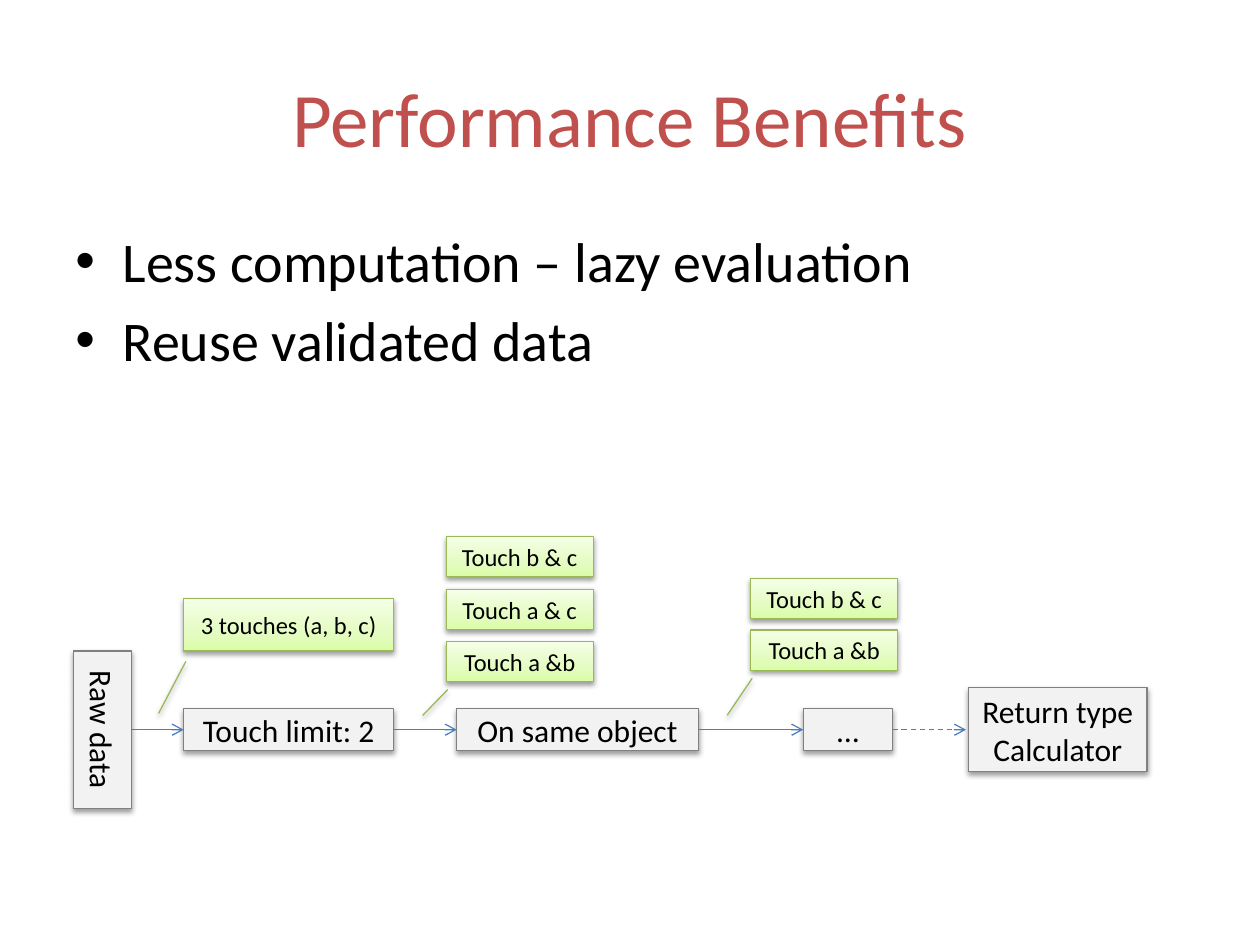
from dataclasses import dataclass

import lxml.etree
import pptx
import pptx.dml.color
import pptx.enum.dml
import pptx.enum.shapes
import pptx.enum.text
import pptx.oxml.ns
import pptx.util

Pt = pptx.util.Pt
qn = pptx.oxml.ns.qn
ALIGN = pptx.enum.text.PP_ALIGN
ANCHOR = pptx.enum.text.MSO_ANCHOR
PRESET = pptx.enum.shapes.MSO_SHAPE


@dataclass(frozen=True)
class Theme:
    font: str = "Calibri"
    title: str = "C0504D"
    text: str = "000000"
    step_fill: str = "F2F2F2"
    step_line: str = "808080"
    note_line: str = "98B955"
    note_stops: tuple = ((0, "DAFDA7"), (35, "E4FCC2"), (100, "F5FFE7"))
    arrow: str = "4B7EBC"
    title_size: float = 44
    body_size: float = 32
    step_size: float = 18
    note_size: float = 14
    line_width: float = 0.75


@dataclass(frozen=True)
class Step:
    text: str
    left: float
    width: float
    height: float = 24
    rotation: float = 0


@dataclass(frozen=True)
class Note:
    text: str
    left: float
    top: float
    width: float = 84
    height: float = 23
    pointer: tuple = ()  # callout adjustments: start y, x and end y, x


@dataclass(frozen=True)
class Arrow:
    start: float
    end: float
    dashed: bool = False


THEME = Theme()
AXIS = 417  # vertical centre of the pipeline
BULLETS = ("Less computation – lazy evaluation", "Reuse validated data")
STEPS = (
    Step("Raw data", 13.5, 90, 33, 90),
    Step("Touch limit: 2", 105, 120),
    Step("On same object", 261, 138),
    Step("…", 459, 51),
    Step("Return type Calculator", 553.5, 102, 48),
)
ARROWS = (Arrow(75, 105), Arrow(225, 261), Arrow(399, 459), Arrow(510, 552, True))
NOTES = (
    Note("3 touches (a, b, c)", 105, 342, 120, 30, (1.2, 0.01, 2.19, -0.12)),
    Note("Touch a &b", 255, 366.5, pointer=(1.2, 0.01, 1.84, -0.16)),
    Note("Touch a & c", 255, 336.75),
    Note("Touch b & c", 255, 306.5),
    Note("Touch a &b", 429, 360, pointer=(1.2, 0.01, 2.12, -0.16)),
    Note("Touch b & c", 429, 330.5),
)


def rgb(value: str) -> pptx.dml.color.RGBColor:
    return pptx.dml.color.RGBColor.from_string(value)


def add_run(paragraph, text: str, size: float, color: str) -> None:
    run = paragraph.add_run()
    run.text = text
    run.font.name = THEME.font
    run.font.size = Pt(size)
    run.font.color.rgb = rgb(color)


def add_color(parent, value: str):
    color = lxml.etree.SubElement(parent, qn("a:srgbClr"))
    color.set("val", value)
    return color


def add_shadow(shape) -> None:
    shape.shadow.inherit = False
    effects = shape._element.spPr.find(qn("a:effectLst"))
    shadow = lxml.etree.SubElement(effects, qn("a:outerShdw"))
    for name, value in (("blurRad", Pt(3.1)), ("dist", Pt(1.6)),
                        ("dir", 90 * 60000), ("rotWithShape", 0)):
        shadow.set(name, str(int(value)))
    alpha = lxml.etree.SubElement(add_color(shadow, "000000"), qn("a:alpha"))
    alpha.set("val", "38000")


def fill_gradient(shape) -> None:
    shape.fill.gradient()
    shape.fill.gradient_angle = 90
    stops = shape._element.spPr.find(qn("a:gradFill")).find(qn("a:gsLst"))
    for old_stop in list(stops):
        stops.remove(old_stop)
    for position, color in THEME.note_stops:
        stop = lxml.etree.SubElement(stops, qn("a:gs"))
        stop.set("pos", str(position * 1000))
        add_color(stop, color)


def add_box(slide, preset, box, top: float, line: str, size: float):
    shape = slide.shapes.add_shape(
        preset, Pt(box.left), Pt(top), Pt(box.width), Pt(box.height))
    shape.line.color.rgb = rgb(line)
    shape.line.width = Pt(THEME.line_width)
    add_shadow(shape)
    frame = shape.text_frame
    frame.word_wrap = True
    frame.vertical_anchor = ANCHOR.MIDDLE
    paragraph = frame.paragraphs[0]
    paragraph.alignment = ALIGN.CENTER
    add_run(paragraph, box.text, size, THEME.text)
    return shape


def add_step(slide, step: Step) -> None:
    shape = add_box(slide, PRESET.RECTANGLE, step, AXIS - step.height / 2,
                    THEME.step_line, THEME.step_size)
    shape.rotation = step.rotation
    shape.fill.solid()
    shape.fill.fore_color.rgb = rgb(THEME.step_fill)


def add_note(slide, note: Note) -> None:
    preset = PRESET.LINE_CALLOUT_1 if note.pointer else PRESET.RECTANGLE
    shape = add_box(slide, preset, note, note.top, THEME.note_line, THEME.note_size)
    for index, value in enumerate(note.pointer):
        shape.adjustments[index] = value
    fill_gradient(shape)


def add_arrow(slide, arrow: Arrow) -> None:
    connector = slide.shapes.add_connector(
        pptx.enum.shapes.MSO_CONNECTOR.STRAIGHT,
        Pt(arrow.start), Pt(AXIS), Pt(arrow.end), Pt(AXIS))
    connector.line.color.rgb = rgb(THEME.arrow)
    connector.line.width = Pt(THEME.line_width)
    if arrow.dashed:
        connector.line.dash_style = pptx.enum.dml.MSO_LINE.DASH
    properties = connector._element.spPr
    head = lxml.etree.SubElement(properties.find(qn("a:ln")), qn("a:tailEnd"))
    head.set("type", "arrow")
    lxml.etree.SubElement(properties, qn("a:effectLst"))


def add_title(slide, text: str) -> None:
    title = slide.shapes.title
    title.left, title.top, title.width, title.height = Pt(36), Pt(21.6), Pt(648), Pt(90)
    title.text_frame.vertical_anchor = ANCHOR.MIDDLE
    paragraph = title.text_frame.paragraphs[0]
    paragraph.alignment = ALIGN.CENTER
    add_run(paragraph, text, THEME.title_size, THEME.title)


def add_bullets(slide) -> None:
    frame = slide.shapes.add_textbox(Pt(36), Pt(126), Pt(648), Pt(168)).text_frame
    frame.word_wrap = True
    for index, text in enumerate(BULLETS):
        paragraph = frame.add_paragraph() if index else frame.paragraphs[0]
        properties = paragraph._p.get_or_add_pPr()
        properties.set("marL", str(Pt(27)))
        properties.set("indent", str(-Pt(27)))
        font = lxml.etree.SubElement(properties, qn("a:buFont"))
        font.set("typeface", "Arial")
        bullet = lxml.etree.SubElement(properties, qn("a:buChar"))
        bullet.set("char", "•")
        if index:
            paragraph.space_before = Pt(THEME.body_size * 0.2)
        add_run(paragraph, text, THEME.body_size, THEME.text)


def main() -> None:
    presentation = pptx.Presentation()
    presentation.slide_width, presentation.slide_height = Pt(720), Pt(540)
    slide = presentation.slides.add_slide(presentation.slide_layouts[5])
    add_title(slide, "Performance Benefits")
    add_bullets(slide)
    # Pipeline along the axis
    for step in STEPS:
        add_step(slide, step)
    for arrow in ARROWS:
        add_arrow(slide, arrow)
    # Notes above the arrows
    for note in NOTES:
        add_note(slide, note)
    presentation.save("out.pptx")


if __name__ == "__main__":
    main()
